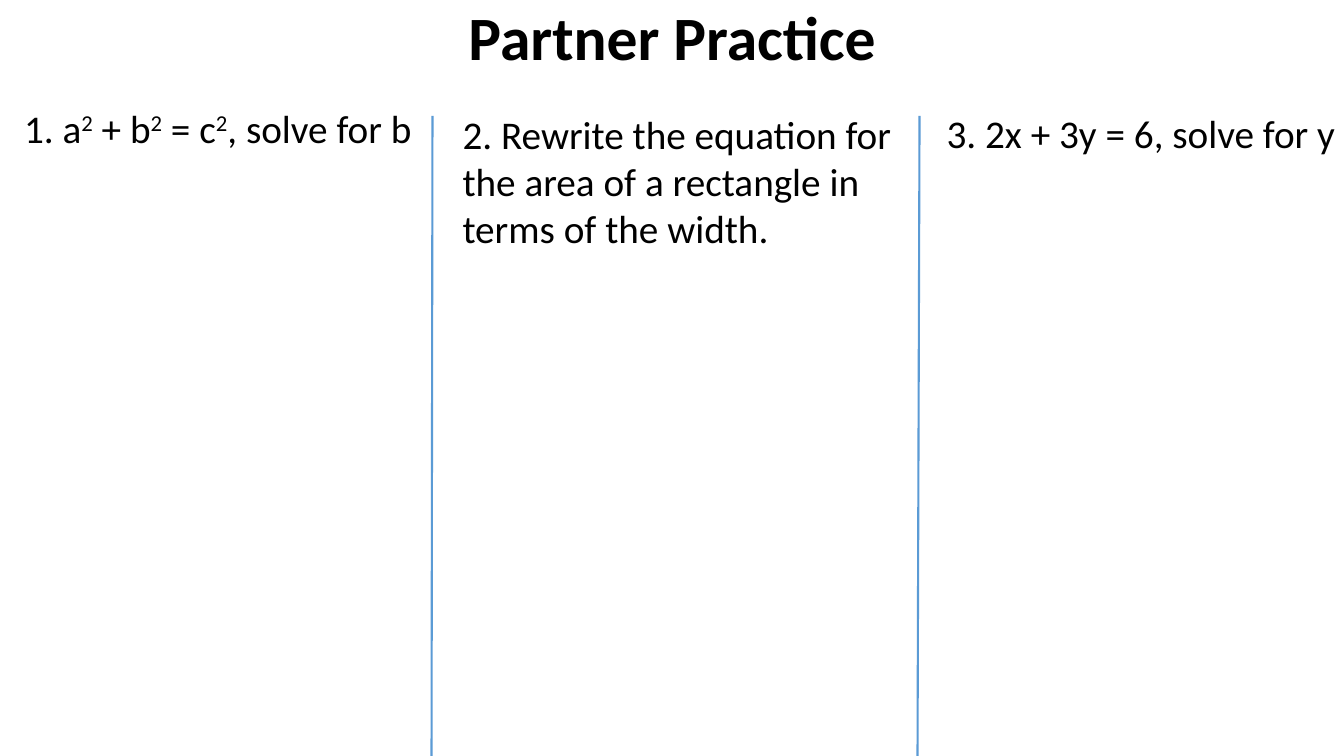
from dataclasses import dataclass

from lxml.etree import SubElement
from pptx import Presentation
from pptx.dml.color import RGBColor
from pptx.enum.shapes import MSO_CONNECTOR
from pptx.enum.text import MSO_ANCHOR, PP_ALIGN
from pptx.oxml.ns import qn
from pptx.util import Inches, Pt


@dataclass(frozen=True)
class Theme:
    font: str = "Calibri"
    ink: RGBColor = RGBColor(0x00, 0x00, 0x00)
    divider: RGBColor = RGBColor(0x5B, 0x9B, 0xD5)
    paper: RGBColor = RGBColor(0xFF, 0xFF, 0xFF)
    title_size: Pt = Pt(44)
    body_size: Pt = Pt(28)
    divider_width: Pt = Pt(1.5)


@dataclass(frozen=True)
class Box:
    left: float
    top: float
    width: float
    height: float


THEME = Theme()
SLIDE_WIDTH, SLIDE_HEIGHT = Inches(13.33), Inches(7.5)
COLUMN_TOP = 13.87
DIVIDER_TOP, DIVIDER_BOTTOM = 15.33, 100

TITLE_BOX = Box(6.9, 0, 86.27, 10.8)
PROBLEMS = [
    (Box(1.05, COLUMN_TOP, 32.11, 63.47), "1. a^2^ + b^2^ = c^2^, solve for b", 0.9, Pt(10)),
    (Box(33.68, COLUMN_TOP, 35.41, 70.4),
     "2. Rewrite the equation for the area of a rectangle in terms of the width.", 1.0, Pt(0)),
    (Box(69.69, COLUMN_TOP, 31.66, 7.6), "3. 2x + 3y = 6, solve for y", 1.0, Pt(0)),
]
DIVIDERS = [(32.18, 32.11), (68.42, 68.27)]


def across(percent):
    return round(SLIDE_WIDTH * percent / 100)


def down(percent):
    return round(SLIDE_HEIGHT * percent / 100)


def add_frame(page, box):
    shape = page.shapes.add_textbox(
        across(box.left), down(box.top), across(box.width), down(box.height))
    shape.text_frame.word_wrap = True
    return shape.text_frame


def add_span(para, text, size, bold=False, raised=False):
    span = para.add_run()
    span.text = text
    span.font.name = THEME.font
    span.font.size = size
    span.font.bold = bold
    span.font.color.rgb = THEME.ink
    if raised:
        span.font._element.set("baseline", "30000")


def add_title(page, box, text):
    frame = add_frame(page, box)
    frame.vertical_anchor = MSO_ANCHOR.MIDDLE
    para = frame.paragraphs[0]
    para.alignment = PP_ALIGN.CENTER
    para.line_spacing = 0.9
    add_span(para, text, THEME.title_size, bold=True)


def add_problem(page, box, text, line_spacing, space_before):
    para = add_frame(page, box).paragraphs[0]
    para.line_spacing = line_spacing
    para.space_before = space_before
    for index, part in enumerate(text.split("^")):
        add_span(para, part, THEME.body_size, raised=index % 2 == 1)


def add_divider(page, top_x, bottom_x):
    line = page.shapes.add_connector(
        MSO_CONNECTOR.STRAIGHT, across(top_x), down(DIVIDER_TOP),
        across(bottom_x), down(DIVIDER_BOTTOM))
    line.line.color.rgb = THEME.divider
    line.line.width = THEME.divider_width
    SubElement(line._element.spPr, qn("a:effectLst"))


def build_practice_slide(deck):
    page = deck.slides.add_slide(deck.slide_layouts[6])
    page.background.fill.solid()
    page.background.fill.fore_color.rgb = THEME.paper
    add_title(page, TITLE_BOX, "Partner Practice")
    for problem in PROBLEMS:
        add_problem(page, *problem)
    for divider in DIVIDERS:
        add_divider(page, *divider)


def main():
    deck = Presentation()
    deck.slide_width, deck.slide_height = SLIDE_WIDTH, SLIDE_HEIGHT
    build_practice_slide(deck)
    deck.save("out.pptx")


if __name__ == "__main__":
    main()
